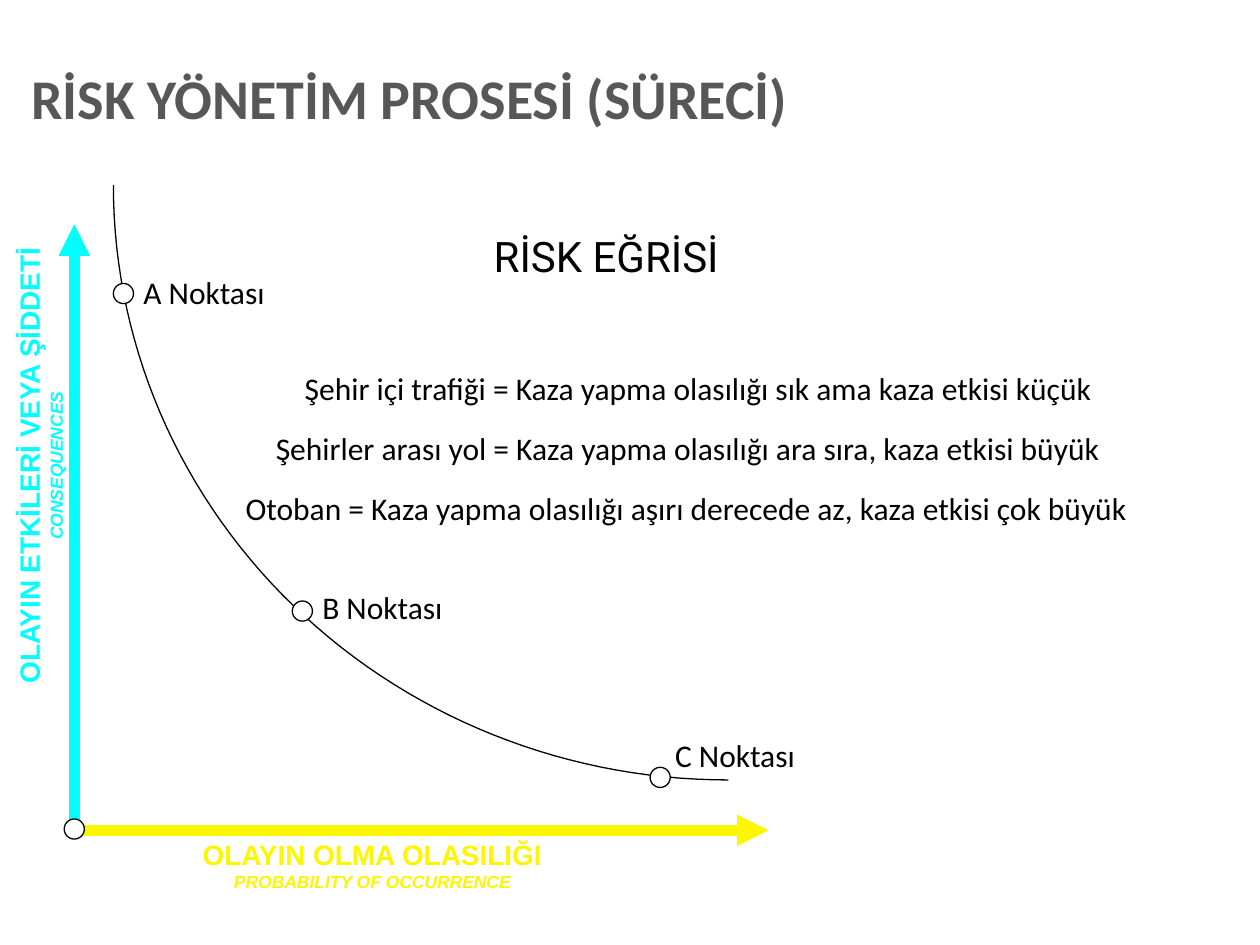
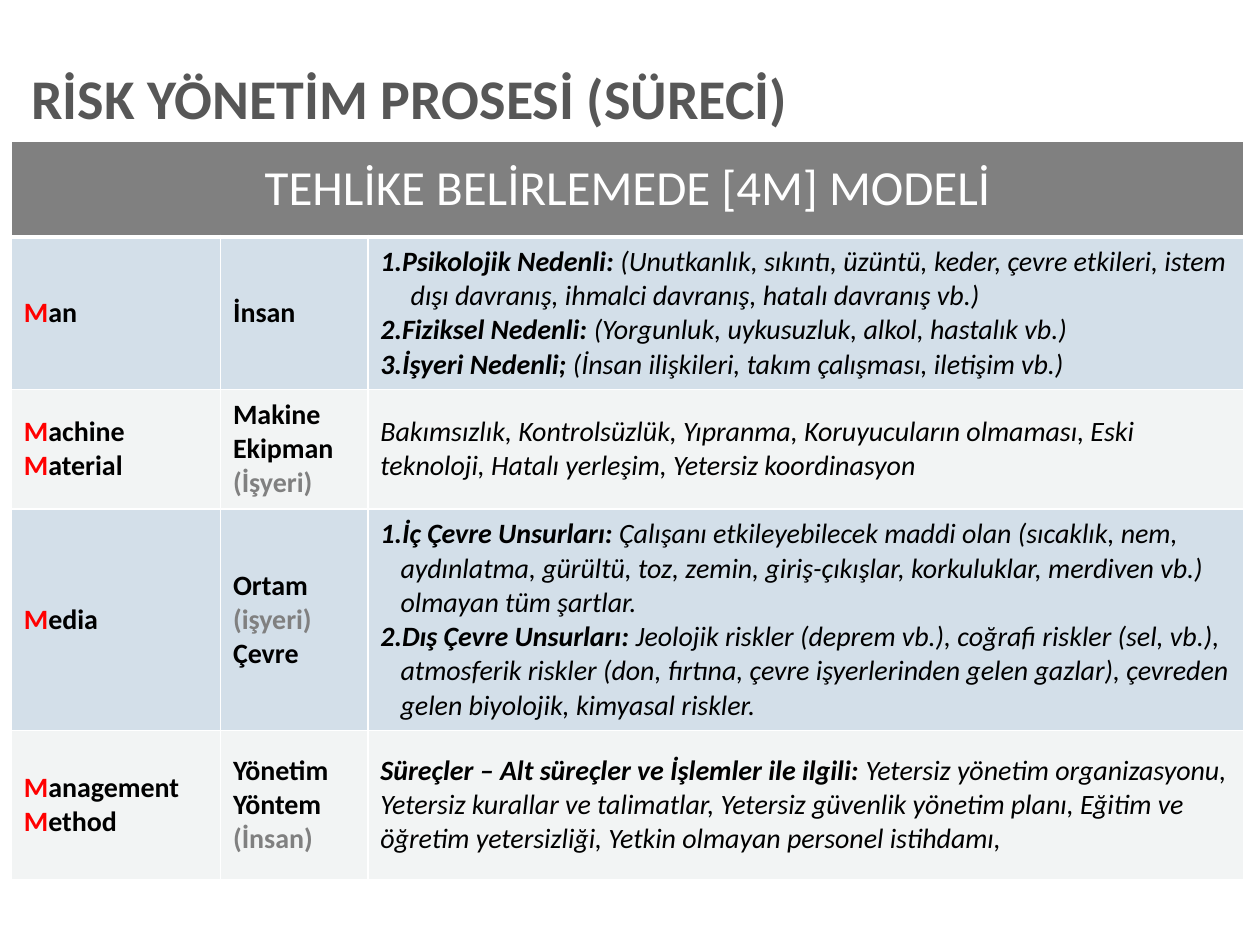
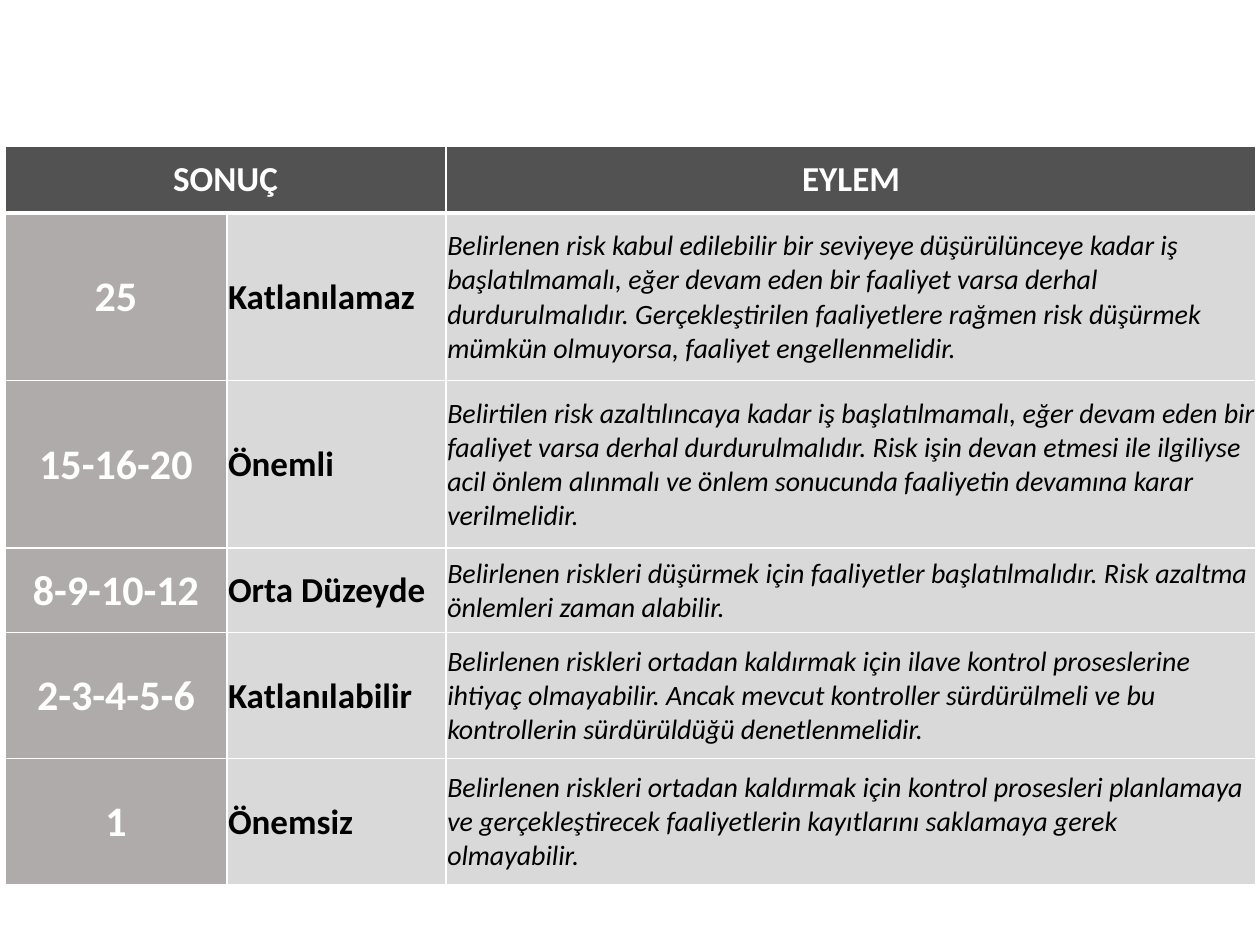
import math

import lxml.etree
import pptx
import pptx.dml.color
import pptx.enum.shapes
import pptx.enum.text
import pptx.oxml.ns
import pptx.util

Inches = pptx.util.Inches
Pt = pptx.util.Pt
Align = pptx.enum.text.PP_ALIGN
Anchor = pptx.enum.text.MSO_ANCHOR
qn = pptx.oxml.ns.qn

BLACK, WHITE, RED, GRAY = "000000", "FFFFFF", "FF0000", "808080"
TITLE_GRAY, CYAN, YELLOW = "575757", "00FFFF", "FCF600"
BLUE_ROW, PALE_ROW = "D3DFE9", "F2F4F4"
HEADING_GRAY, SCORE_GRAY, ACTION_GRAY = "525252", "AFABAB", "D9D9D9"
TITLE = "RİSK YÖNETİM PROSESİ (SÜRECİ)"
BOLD, PLAIN = {"bold": True}, {"bold": False}

CAUSES = [
    (BLUE_ROW, ["Man"], ["İnsan"], True, [
        ("Psikolojik Nedenli: ", "(Unutkanlık, sıkıntı, üzüntü, keder, çevre etkileri, istem\v"
         "\tdışı davranış, ihmalci davranış, hatalı davranış vb.)"),
        ("Fiziksel Nedenli: ", "(Yorgunluk, uykusuzluk, alkol, hastalık vb.)"),
        ("İşyeri Nedenli; ", "(İnsan ilişkileri, takım çalışması, iletişim vb.)")]),
    (PALE_ROW, ["Machine", "Material"], ["Makine", "Ekipman", "(İşyeri)"], False, [
        ("", "Bakımsızlık, Kontrolsüzlük, Yıpranma, Koruyucuların olmaması, Eski teknoloji, "
         "Hatalı yerleşim, Yetersiz koordinasyon")]),
    (BLUE_ROW, ["Media"], ["Ortam", "(işyeri)", "Çevre"], True, [
        ("İç Çevre Unsurları: ", "Çalışanı etkileyebilecek maddi olan (sıcaklık, nem, "
         "aydınlatma, gürültü, toz, zemin, giriş-çıkışlar, korkuluklar, merdiven vb.) "
         "olmayan tüm şartlar."),
        ("Dış Çevre Unsurları: ", "Jeolojik riskler (deprem vb.), coğrafi riskler (sel, vb.), "
         "atmosferik riskler (don, fırtına, çevre işyerlerinden gelen gazlar), çevreden gelen "
         "biyolojik, kimyasal riskler.")]),
    (PALE_ROW, ["Management", "Method"], ["Yönetim", "Yöntem", "(İnsan)"], False, [
        ("Süreçler – Alt süreçler ve İşlemler ile ilgili: ", "Yetersiz yönetim organizasyonu, "
         "Yetersiz kurallar ve talimatlar, Yetersiz güvenlik yönetim planı, Eğitim ve öğretim "
         "yetersizliği, Yetkin olmayan personel istihdamı,")]),
]

ACTIONS = [
    ("25", "Katlanılamaz", "Belirlenen risk kabul edilebilir bir seviyeye düşürülünceye kadar iş "
     "başlatılmamalı, eğer devam eden bir faaliyet varsa derhal durdurulmalıdır. Gerçekleştirilen "
     "faaliyetlere rağmen risk düşürmek mümkün olmuyorsa, faaliyet engellenmelidir."),
    ("15-16-20", "Önemli", "Belirtilen risk azaltılıncaya kadar iş başlatılmamalı, eğer devam eden "
     "bir faaliyet varsa derhal durdurulmalıdır. Risk işin devan etmesi ile ilgiliyse acil önlem "
     "alınmalı ve önlem sonucunda faaliyetin devamına karar verilmelidir."),
    ("8-9-10-12", "Orta Düzeyde", "Belirlenen riskleri düşürmek için faaliyetler başlatılmalıdır. "
     "Risk azaltma önlemleri zaman alabilir."),
    ("2-3-4-5-6", "Katlanılabilir", "Belirlenen riskleri ortadan kaldırmak için ilave kontrol "
     "proseslerine ihtiyaç olmayabilir. Ancak mevcut kontroller sürdürülmeli ve bu kontrollerin "
     "sürdürüldüğü denetlenmelidir."),
    ("1", "Önemsiz", "Belirlenen riskleri ortadan kaldırmak için kontrol prosesleri planlamaya ve "
     "gerçekleştirecek faaliyetlerin kayıtlarını saklamaya gerek olmayabilir."),
]


def rgb(value):
    """Turn a hex string into a colour."""
    return pptx.dml.color.RGBColor.from_string(value)


def add_xml(parent, tag, **attributes):
    """Append a drawing element to a parent."""
    return lxml.etree.SubElement(parent, qn(tag), attributes)


def write_run(paragraph, text, size=18, font="Calibri", color=BLACK, bold=False, italic=False):
    """Add formatted text to a paragraph, with line breaks at vertical tabs."""
    for index, line in enumerate(text.split("\v")):
        if index:
            paragraph.add_line_break()
        run = paragraph.add_run()
        run.text = line
        run.font.size, run.font.name = Pt(size), font
        run.font.bold, run.font.italic = bold, italic
        run.font.color.rgb = rgb(color)


def number_paragraph(paragraph):
    """Give a paragraph a hanging automatic number."""
    properties = paragraph._p.get_or_add_pPr()
    properties.set("marL", str(Inches(0.16)))
    properties.set("indent", str(Inches(-0.24)))
    add_xml(properties, "a:buFont", typeface="+mj-lt")
    add_xml(properties, "a:buAutoNum", type="arabicPeriod")
    tabs = add_xml(properties, "a:tabLst")
    add_xml(tabs, "a:tab", pos=str(Inches(0.24)), algn="l")


def write_text(frame, paragraphs, align=Align.LEFT, numbered=False, **style):
    """Fill a frame with paragraphs, each a list of text and format pairs."""
    for index, runs in enumerate(paragraphs):
        paragraph = frame.add_paragraph() if index else frame.paragraphs[0]
        paragraph.alignment = align
        if numbered:
            number_paragraph(paragraph)
        for text, changes in runs:
            write_run(paragraph, text, **{**style, **changes})


def add_label(slide, left, top, width, height, paragraphs, rotation=0, **style):
    """Add a text box that does not wrap."""
    label = slide.shapes.add_textbox(Inches(left), Inches(top), Inches(width), Inches(height))
    label.rotation = rotation
    label.text_frame.word_wrap = False
    label.text_frame.auto_size = pptx.enum.text.MSO_AUTO_SIZE.SHAPE_TO_FIT_TEXT
    write_text(label.text_frame, paragraphs, **style)


def add_title(slide):
    """Add the shared slide title."""
    frame = slide.shapes.add_textbox(Inches(0.25), Inches(0.45), Inches(9.64), Inches(0.71)).text_frame
    frame.word_wrap = True
    frame.margin_left = frame.margin_right = 0
    frame.vertical_anchor = Anchor.MIDDLE
    write_text(frame, [[(TITLE, {})]], size=32, color=TITLE_GRAY, bold=True)
    frame.paragraphs[0].line_spacing = 0.9


def add_axis(slide, start, end, color):
    """Add a thick axis with an arrowhead at its end."""
    axis = slide.shapes.add_connector(
        pptx.enum.shapes.MSO_CONNECTOR.STRAIGHT, *(Inches(value) for value in start + end))
    axis.line.color.rgb = rgb(color)
    axis.line.width = Pt(6)
    properties = axis._element.spPr
    add_xml(properties.find(qn("a:ln")), "a:tailEnd", type="triangle")
    add_xml(properties, "a:effectLst")


def add_axis_label(slide, left, top, width, name, translation, color, rotation=0):
    """Add an axis name with its translation below."""
    add_label(slide, left, top, width, 0.53,
              [[(name, {})], [(translation, {"size": 10, "italic": True})]],
              rotation, align=Align.CENTER, size=16, font="Arial", color=color, bold=True)


def outline(shape):
    """Give a shape a thin black line and no shadow."""
    shape.shadow.inherit = False
    shape.line.color.rgb = rgb(BLACK)
    shape.line.width = Pt(0.75)


def add_risk_curve(slide, left, top, width, height, steps=60):
    """Draw the quarter ellipse that falls from upper left to lower right."""
    angles = [math.pi / 2 * step / steps for step in range(steps + 1)]
    points = [(Inches(left + width * (1 - math.cos(angle))), Inches(top + height * math.sin(angle)))
              for angle in angles]
    builder = slide.shapes.build_freeform(*points[0])
    builder.add_line_segments(points[1:], close=False)
    curve = builder.convert_to_shape()
    curve.fill.background()
    outline(curve)


def add_dot(slide, left, top):
    """Add a small white circle."""
    dot = slide.shapes.add_shape(pptx.enum.shapes.MSO_SHAPE.OVAL, Inches(left), Inches(top),
                                 Inches(0.16), Inches(0.16))
    dot.fill.solid()
    dot.fill.fore_color.rgb = rgb(WHITE)
    outline(dot)


def add_grid(slide, left, top, widths, heights):
    """Add an unstyled table with the given column widths and row heights."""
    grid = slide.shapes.add_table(len(heights), len(widths), Inches(left), Inches(top),
                                  Inches(sum(widths)), Inches(sum(heights))).table
    grid.first_row = grid.horz_banding = False
    for column, width in zip(grid.columns, widths):
        column.width = Inches(width)
    for row, height in zip(grid.rows, heights):
        row.height = Inches(height)
    return grid


def fill_cell(cell, fill, paragraphs, bottom=1, tight=False, **style):
    """Set a cell's white borders, fill and text."""
    cell.vertical_anchor = Anchor.MIDDLE
    if tight:
        cell.margin_left = cell.margin_right = cell.margin_top = Inches(0.01)
        cell.margin_bottom = 0
    properties = cell._tc.get_or_add_tcPr()
    for side, width in (("L", 1), ("R", 1), ("T", 1), ("B", bottom)):
        border = add_xml(properties, "a:ln" + side, w=str(Pt(width)))
        add_xml(add_xml(border, "a:solidFill"), "a:srgbClr", val=WHITE)
    cell.fill.solid()
    cell.fill.fore_color.rgb = rgb(fill)
    write_text(cell.text_frame, paragraphs, **style)


def build_curve_slide(slide):
    """Build the risk curve slide."""
    add_title(slide)
    add_axis(slide, (0.59, 6.59), (0.59, 1.78), CYAN)
    add_axis(slide, (0.59, 6.59), (6.1, 6.59), YELLOW)
    add_axis_label(slide, 1.49, 6.6, 2.93, "OLAYIN OLMA OLASILIĞI", "PROBABILITY OF OCCURRENCE", YELLOW)
    add_axis_label(slide, -1.55, 3.43, 3.72, "OLAYIN ETKİLERİ VEYA ŞİDDETİ", "CONSEQUENCES", CYAN, 270)
    add_risk_curve(slide, 0.9, 1.47, 4.88, 4.72)
    for left, top in ((0.51, 6.5), (0.9, 2.25), (2.32, 4.77), (5.16, 6.09)):
        add_dot(slide, left, top)
    for left, top, width, text in (
            (1.04, 2.12, 1.24, "A Noktası"),
            (2.46, 4.62, 1.24, "B Noktası"),
            (5.26, 5.79, 1.24, "C Noktası"),
            (2.32, 2.88, 7.29, "Şehir içi trafiği = Kaza yapma olasılığı sık ama kaza etkisi küçük"),
            (2.09, 3.36, 7.62, "Şehirler arası yol = Kaza yapma olasılığı ara sıra, kaza etkisi büyük"),
            (1.85, 3.83, 8.08, "Otoban = Kaza yapma olasılığı aşırı derecede az, kaza etkisi çok büyük")):
        add_label(slide, left, top, width, 0.4, [[(text, {})]])
    add_label(slide, 3.82, 1.78, 2.14, 0.5, [[("RİSK EĞRİSİ", {})]], size=24, font="Roboto")


def build_model_slide(slide):
    """Build the 4M model slide."""
    add_title(slide)
    grid = add_grid(slide, 0.09, 1.12, (1.66, 1.17, 6.95), (0.76, 1.21, 0.95, 1.76, 1.18))
    for column in range(3):
        heading = [[("TEHLİKE BELİRLEMEDE [4M] MODELİ", {})]] if column == 0 else []
        fill_cell(grid.cell(0, column), GRAY, heading, bottom=3, align=Align.CENTER, size=28, color=WHITE)
    grid.cell(0, 0).merge(grid.cell(0, 2))
    for row, (fill, factors, meanings, numbered, causes) in enumerate(CAUSES, 1):
        initials = [[(word[0], {"color": RED}), (word[1:], {})] for word in factors]
        translations = [[(word, {"color": GRAY if word.startswith("(") else BLACK})] for word in meanings]
        details = [[(text, weight) for text, weight in ((lead, BOLD), (detail, PLAIN)) if text]
                   for lead, detail in causes]
        fill_cell(grid.cell(row, 0), fill, initials, size=16, bold=True)
        fill_cell(grid.cell(row, 1), fill, translations, size=16, bold=True)
        fill_cell(grid.cell(row, 2), fill, details, numbered=numbered, size=16, italic=True)


def build_action_slide(slide):
    """Build the slide of risk results and actions."""
    grid = add_grid(slide, 0.04, 1.16, (1.76, 1.74, 6.43), (0.53, 1.33, 1.33, 0.67, 1, 1))
    for column, heading in enumerate(("SONUÇ", "", "EYLEM")):
        fill_cell(grid.cell(0, column), HEADING_GRAY, [[(heading, {})]] if heading else [], bottom=3,
                  align=Align.CENTER, size=20, color=WHITE, bold=True)
    grid.cell(0, 0).merge(grid.cell(0, 1))
    for row, (score, result, action) in enumerate(ACTIONS, 1):
        fill_cell(grid.cell(row, 0), SCORE_GRAY, [[(score, {})]], tight=True,
                  align=Align.CENTER, size=24, color=WHITE, bold=True)
        fill_cell(grid.cell(row, 1), ACTION_GRAY, [[(result, {})]], tight=True, size=20, bold=True)
        fill_cell(grid.cell(row, 2), ACTION_GRAY, [[(action, {})]], tight=True, size=16, italic=True)


def main():
    """Build and save the presentation."""
    deck = pptx.Presentation()
    deck.slide_width, deck.slide_height = Inches(10), Inches(7.5)
    for build in (build_curve_slide, build_model_slide, build_action_slide):
        build(deck.slides.add_slide(deck.slide_layouts[6]))
    deck.save("out.pptx")


if __name__ == "__main__":
    main()
